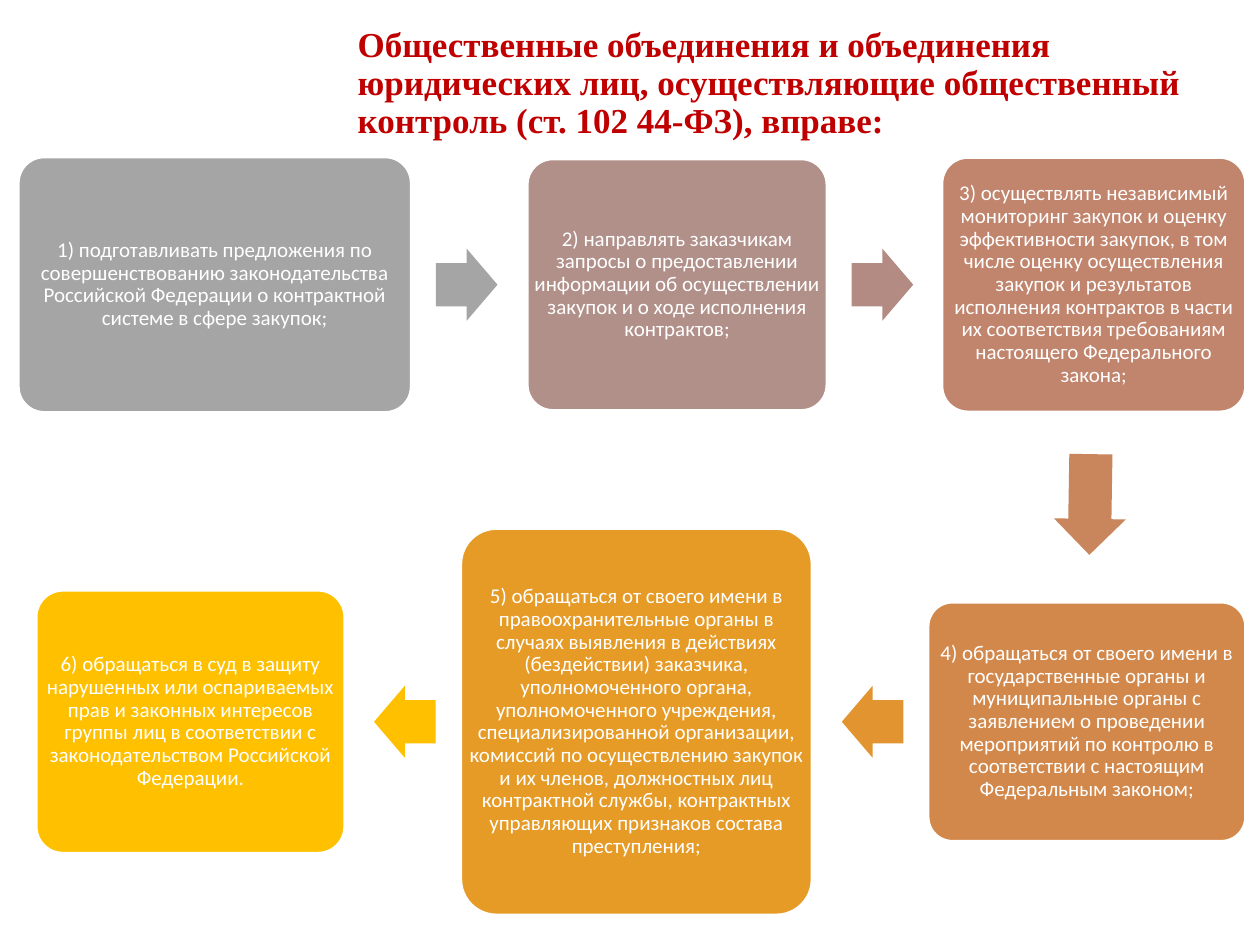
from typing import NamedTuple

from pptx import Presentation
from pptx.dml.color import RGBColor
from pptx.enum.shapes import MSO_SHAPE
from pptx.enum.text import MSO_ANCHOR, PP_ALIGN
from pptx.util import Cm, Pt

WHITE = RGBColor(0xFF, 0xFF, 0xFF)
DARK_RED = RGBColor(0xC0, 0x00, 0x00)
GREY = RGBColor(0xA5, 0xA5, 0xA5)
MAUVE = RGBColor(0xB1, 0x90, 0x8A)
MAUVE_ARROW = RGBColor(0xB4, 0x8B, 0x83)
CLAY = RGBColor(0xC1, 0x84, 0x6C)
CLAY_ARROW = RGBColor(0xC9, 0x85, 0x5C)
COPPER = RGBColor(0xD2, 0x88, 0x4B)
ORANGE_ARROW = RGBColor(0xE1, 0x94, 0x30)
ORANGE = RGBColor(0xE6, 0x9B, 0x27)
YELLOW = RGBColor(0xFF, 0xC0, 0x00)

# Centre lines of the two rows, in cm
TOP_ROW, BOTTOM_ROW = 5.74, 14.55


class Step(NamedTuple):
    left: float
    middle: float
    width: float
    height: float
    color: RGBColor
    text: str


class Arrow(NamedTuple):
    left: float
    middle: float
    color: RGBColor
    rotation: float = 0
    width: float = 1.24
    height: float = 1.45


STEPS = [
    Step(0.38, TOP_ROW, 7.9, 5.13, GREY,
         "1) подготавливать предложения по совершенствованию законодательства "
         "Российской Федерации о контрактной системе в сфере закупок;"),
    Step(10.64, TOP_ROW, 6.02, 5.05, MAUVE,
         "2) направлять заказчикам запросы о предоставлении информации об "
         "осуществлении закупок и о ходе исполнения контрактов;"),
    Step(19, TOP_ROW, 6.1, 5.11, CLAY,
         "3) осуществлять независимый мониторинг закупок и оценку эффективности "
         "закупок, в том числе оценку осуществления закупок и результатов "
         "исполнения контрактов в части их соответствия требованиям настоящего "
         "Федерального закона;"),
    Step(18.72, BOTTOM_ROW, 6.38, 4.8, COPPER,
         "4) обращаться от своего имени в государственные органы и муниципальные "
         "органы с заявлением о проведении мероприятий по контролю в "
         "соответствии с настоящим Федеральным законом;"),
    Step(9.3, BOTTOM_ROW, 7.06, 7.77, ORANGE,
         "5) обращаться от своего имени в правоохранительные органы в случаях "
         "выявления в действиях (бездействии) заказчика, уполномоченного органа, "
         "уполномоченного учреждения, специализированной организации, комиссий "
         "по осуществлению закупок и их членов, должностных лиц контрактной "
         "службы, контрактных управляющих признаков состава преступления;"),
    Step(0.74, BOTTOM_ROW, 6.2, 5.28, YELLOW,
         "6) обращаться в суд в защиту нарушенных или оспариваемых прав и "
         "законных интересов группы лиц в соответствии с законодательством "
         "Российской Федерации."),
]

ARROWS = [
    Arrow(8.79, TOP_ROW, GREY),
    Arrow(17.17, TOP_ROW, MAUVE_ARROW),
    Arrow(20.96, 10.17, CLAY_ARROW, rotation=90.9, width=2.03),
    Arrow(16.97, BOTTOM_ROW, ORANGE_ARROW, rotation=180),
    Arrow(7.54, BOTTOM_ROW, YELLOW, rotation=180),
]


def add_text(s, text: str, left: float, top: float, width: float, height: float,
             *, font: str = "Calibri", size: float = 12, color: RGBColor = WHITE,
             bold: bool = False, align=PP_ALIGN.CENTER, anchor=MSO_ANCHOR.MIDDLE,
             inset_x: float = 0.13, inset_y: float = 0.13) -> None:
    sp = s.shapes.add_textbox(Cm(left), Cm(top), Cm(width), Cm(height))
    tf = sp.text_frame
    tf.word_wrap = True
    tf.vertical_anchor = anchor
    tf.margin_left = tf.margin_right = Cm(inset_x)
    tf.margin_top = tf.margin_bottom = Cm(inset_y)
    p = tf.paragraphs[0]
    p.alignment = align
    p.line_spacing = 0.9
    r = p.add_run()
    r.text = text
    r.font.name = font
    r.font.size = Pt(size)
    r.font.bold = bold
    r.font.color.rgb = color


def add_block(s, kind: MSO_SHAPE, item: Step | Arrow):
    """Add a filled shape centred on the item's middle line."""
    sp = s.shapes.add_shape(kind, Cm(item.left), Cm(item.middle - item.height / 2),
                            Cm(item.width), Cm(item.height))
    sp.shadow.inherit = False
    sp.fill.solid()
    sp.fill.fore_color.rgb = item.color
    return sp


def add_step(s, step: Step) -> None:
    sp = add_block(s, MSO_SHAPE.ROUNDED_RECTANGLE, step)
    sp.adjustments[0] = 0.1
    sp.line.color.rgb = WHITE
    sp.line.width = Pt(1)
    add_text(s, step.text, step.left, step.middle - step.height / 2,
             step.width, step.height)


def add_arrow(s, arrow: Arrow) -> None:
    sp = add_block(s, MSO_SHAPE.RIGHT_ARROW, arrow)
    sp.adjustments[0] = 0.6
    sp.adjustments[1] = 0.5
    sp.line.fill.background()
    sp.rotation = arrow.rotation


def main() -> None:
    prs = Presentation()
    prs.slide_width, prs.slide_height = Cm(25.4), Cm(19.05)
    s = prs.slides.add_slide(prs.slide_layouts[6])

    # Title
    add_text(s, "Общественные объединения и объединения юридических лиц, "
             "осуществляющие общественный контроль (ст. 102 44-ФЗ), вправе:",
             6.96, 0.56, 17.98, 2.97, font="Times New Roman", size=20,
             color=DARK_RED, bold=True, align=PP_ALIGN.LEFT,
             anchor=MSO_ANCHOR.TOP, inset_x=0.25, inset_y=0)

    # Steps and the arrows between them
    for step in STEPS:
        add_step(s, step)
    for arrow in ARROWS:
        add_arrow(s, arrow)

    prs.save("out.pptx")


if __name__ == "__main__":
    main()
